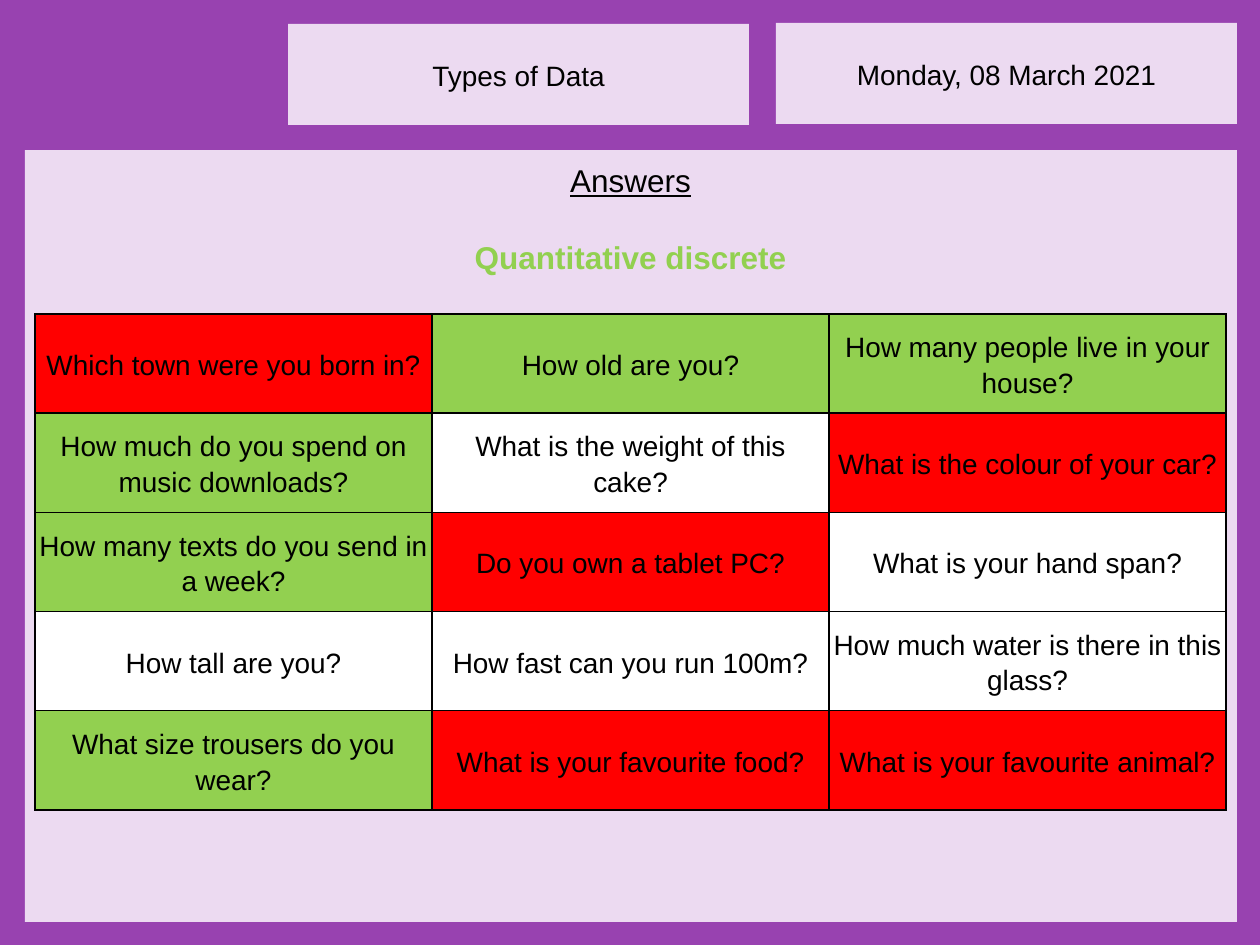
from lxml import etree
from pptx import Presentation
from pptx import util as u
from pptx.dml.color import RGBColor
from pptx.enum import shapes, text
from pptx.oxml.ns import qn

SCALE = 914400 / 126
FONT = "Arial"
PURPLE, LILAC, BLACK = "9842B0", "ECDAF1", "000000"
RED, GREEN, WHITE = "FF0000", "92D050", "FFFFFF"

QUESTIONS = [
    [("Which town were you born in?", RED),
     ("How old are you?", GREEN),
     ("How many people live in your house?", GREEN)],
    [("How much do you spend on music downloads?", GREEN),
     ("What is the weight of this cake?", WHITE),
     ("What is the colour of your car?", RED)],
    [("How many texts do you send in a week?", GREEN),
     ("Do you own a tablet PC?", RED),
     ("What is your hand span?", WHITE)],
    [("How tall are you?", WHITE),
     ("How fast can you run 100m?", WHITE),
     ("How much water is there in this glass?", WHITE)],
    [("What size trousers do you wear?", GREEN),
     ("What is your favourite food?", RED),
     ("What is your favourite animal?", RED)],
]


def px(length):
    return u.Emu(round(length * SCALE))


def paint(target, colour):
    target.solid()
    target.fore_color.rgb = RGBColor.from_string(colour)


def write(para, words, size, colour=BLACK):
    para.text = words
    para.alignment = text.PP_ALIGN.CENTER
    para.font.name = FONT
    para.font.size = u.Pt(size)
    para.font.color.rgb = RGBColor.from_string(colour)
    return para


def add_panel(page, box, colour):
    panel = page.shapes.add_shape(shapes.MSO_SHAPE.RECTANGLE, *map(px, box))
    panel.shadow.inherit = False
    panel.line.fill.background()
    paint(panel.fill, colour)


def add_text(page, box):
    frame = page.shapes.add_textbox(*map(px, box)).text_frame
    frame.word_wrap = True
    return frame


def add_label(page, box, words):
    left, top, width, height = box
    add_panel(page, box, LILAC)
    frame = add_text(page, (left, top + 28, width, 47))
    write(frame.paragraphs[0], words, 16)


def add_heading(page, box):
    frame = add_text(page, box)
    title = write(frame.paragraphs[0], "Answers", 18)
    title.font.underline = True
    kind = write(frame.add_paragraph(), "Quantitative discrete", 18, GREEN)
    kind.font.bold = True
    kind.space_before = u.Pt(22.5)


def outline(cell):
    props = cell._tc.get_or_add_tcPr()
    for position, side in enumerate(("a:lnL", "a:lnR", "a:lnT", "a:lnB")):
        line = etree.Element(qn(side), w=str(u.Pt(1)))
        fill = etree.SubElement(line, qn("a:solidFill"))
        etree.SubElement(fill, qn("a:srgbClr"), val=BLACK)
        props.insert(position, line)


def fill_cell(cell, words, colour):
    cell.margin_left = cell.margin_right = px(4)
    cell.margin_top = cell.margin_bottom = px(1)
    cell.vertical_anchor = text.MSO_ANCHOR.MIDDLE
    paint(cell.fill, colour)
    outline(cell)
    para = write(cell.text_frame.paragraphs[0], words, 16)
    para.line_spacing = 1.15
    para.space_after = u.Pt(10)


def add_questions(page, box):
    left, top, width, height = box
    rows, columns = len(QUESTIONS), len(QUESTIONS[0])
    table = page.shapes.add_table(rows, columns, *map(px, box)).table
    for column in table.columns:
        column.width = px(width / columns)
    for row, questions in zip(table.rows, QUESTIONS):
        row.height = px(height / rows)
        for cell, (words, colour) in zip(row.cells, questions):
            fill_cell(cell, words, colour)


def add_answers(page, box):
    left, top, width, height = box
    add_panel(page, box, LILAC)
    add_questions(page, (left + 10, top + 164, 1191, 496))
    add_heading(page, (left + 10, top + 5, 1191, 127))


def main():
    deck = Presentation()
    deck.slide_width, deck.slide_height = px(1260), px(945)
    page = deck.slides.add_slide(deck.slide_layouts[6])
    add_panel(page, (0, 0, 1260, 945), PURPLE)
    add_label(page, (776, 23, 461, 101), "Monday, 08 March 2021")
    add_label(page, (288, 24, 461, 101), "Types of Data")
    add_answers(page, (25, 150, 1212, 772))
    deck.save("out.pptx")


if __name__ == "__main__":
    main()
